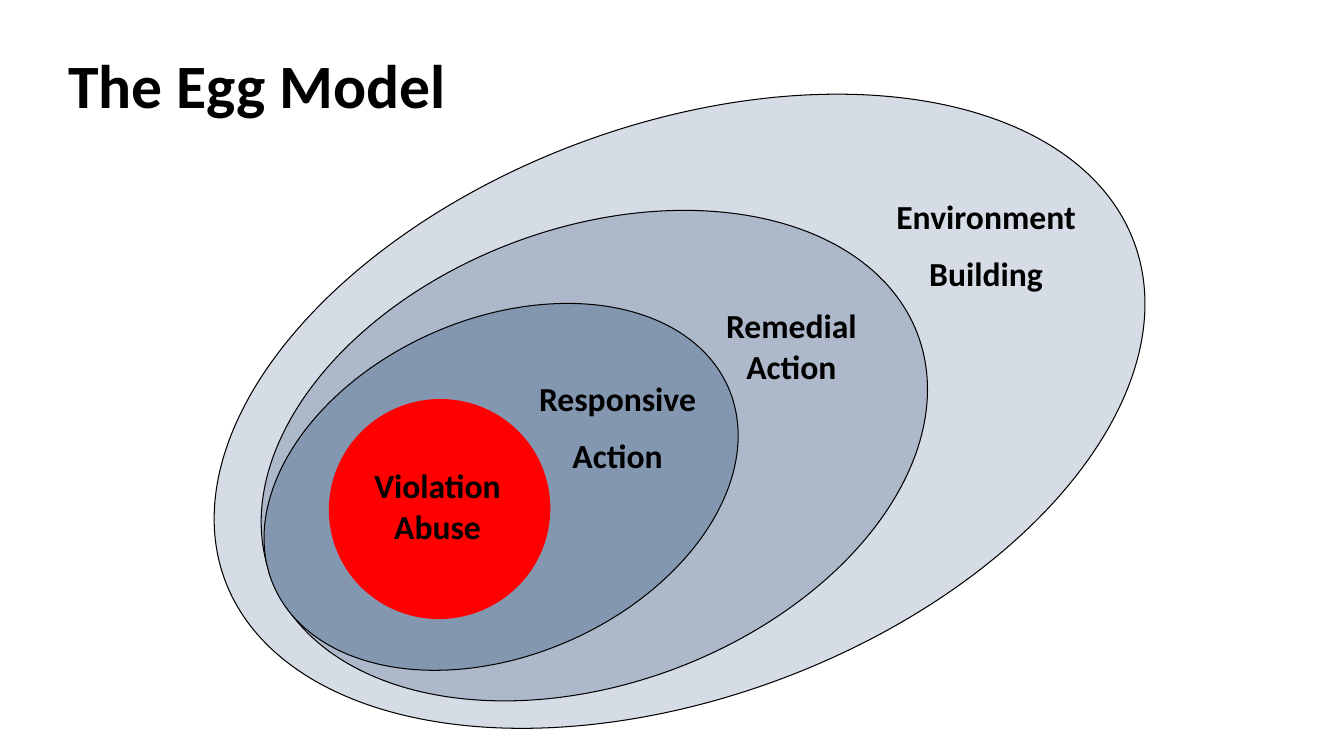
import pptx
import pptx.util
import pptx.dml.color
import pptx.enum.shapes
import pptx.enum.text

Inches, Pt = pptx.util.Inches, pptx.util.Pt
RGB = pptx.dml.color.RGBColor.from_string
SHAPE = pptx.enum.shapes.MSO_SHAPE
ALIGN = pptx.enum.text.PP_ALIGN
MIDDLE = pptx.enum.text.MSO_ANCHOR.MIDDLE

# Content: boxes are left, top, width, height in inches
TITLE = "The Egg Model"
TITLE_BOX = (0.58, 0.3, 7.2, 1.16)
LAYERS = [  # outermost first
    dict(lines=["Environment", "Building"], fill="outer", outlined=True, gap=12,
         oval=(1.93, 1.24, 9.62, 5.68), turn=-20.4, label=(8.73, 1.87, 2.1, 1.11)),
    dict(lines=["Remedial", "Action"], fill="middle", outlined=True, gap=0,
         oval=(2.47, 2.26, 6.85, 4.52), turn=-20.5, label=(6.9, 2.98, 1.9, 0.9)),
    dict(lines=["Responsive", "Action"], fill="inner", outlined=True, gap=12,
         oval=(2.51, 3.16, 4.92, 3.34), turn=-23.6, label=(5.17, 3.68, 1.91, 1.11)),
    dict(lines=["Violation", "Abuse"], fill="core", outlined=False, gap=0,
         oval=(3.26, 3.96, 2.2, 2.18), turn=-23.6, label=(3.52, 4.56, 1.64, 0.91)),
]

THEME = dict(
    font="Calibri", ink="000000", title_size=44, label_size=24, line=0.75,
    outer="D6DCE5", middle="ADB9CA", inner="8497B0", core="FF0000",
)


def add_filled(slide, kind, box, colour, outlined=False):
    s = slide.shapes.add_shape(kind, *map(Inches, box))
    s.shadow.inherit = False
    s.fill.solid()
    s.fill.fore_color.rgb = RGB(THEME[colour])
    if outlined:
        s.line.color.rgb = RGB(THEME["ink"])
        s.line.width = Pt(THEME["line"])
    else:
        s.line.fill.background()
    return s


def write(shape, lines, size, align, gap=0, spacing=1.0):
    tf = shape.text_frame
    tf.word_wrap = True
    tf.vertical_anchor = MIDDLE
    tf.text = "\n".join(lines)
    for i, p in enumerate(tf.paragraphs):
        p.alignment = align
        p.line_spacing = spacing
        if i:
            p.space_before = Pt(gap)
        for r in p.runs:
            r.font.name = THEME["font"]
            r.font.size = Pt(size)
            r.font.bold = True
            r.font.color.rgb = RGB(THEME["ink"])


def main():
    prs = pptx.Presentation()
    prs.slide_width, prs.slide_height = Inches(13.33), Inches(7.5)
    slide = prs.slides.add_slide(prs.slide_layouts[6])

    # Nested eggs, each with its label
    for layer in LAYERS:
        egg = add_filled(slide, SHAPE.OVAL, layer["oval"], layer["fill"], layer["outlined"])
        egg.rotation = layer["turn"]
        label = add_filled(slide, SHAPE.RECTANGLE, layer["label"], layer["fill"])
        write(label, layer["lines"], THEME["label_size"], ALIGN.CENTER, layer["gap"])

    # Title
    title = slide.shapes.add_textbox(*map(Inches, TITLE_BOX))
    write(title, [TITLE], THEME["title_size"], ALIGN.JUSTIFY, spacing=0.9)

    prs.save("out.pptx")


if __name__ == "__main__":
    main()
